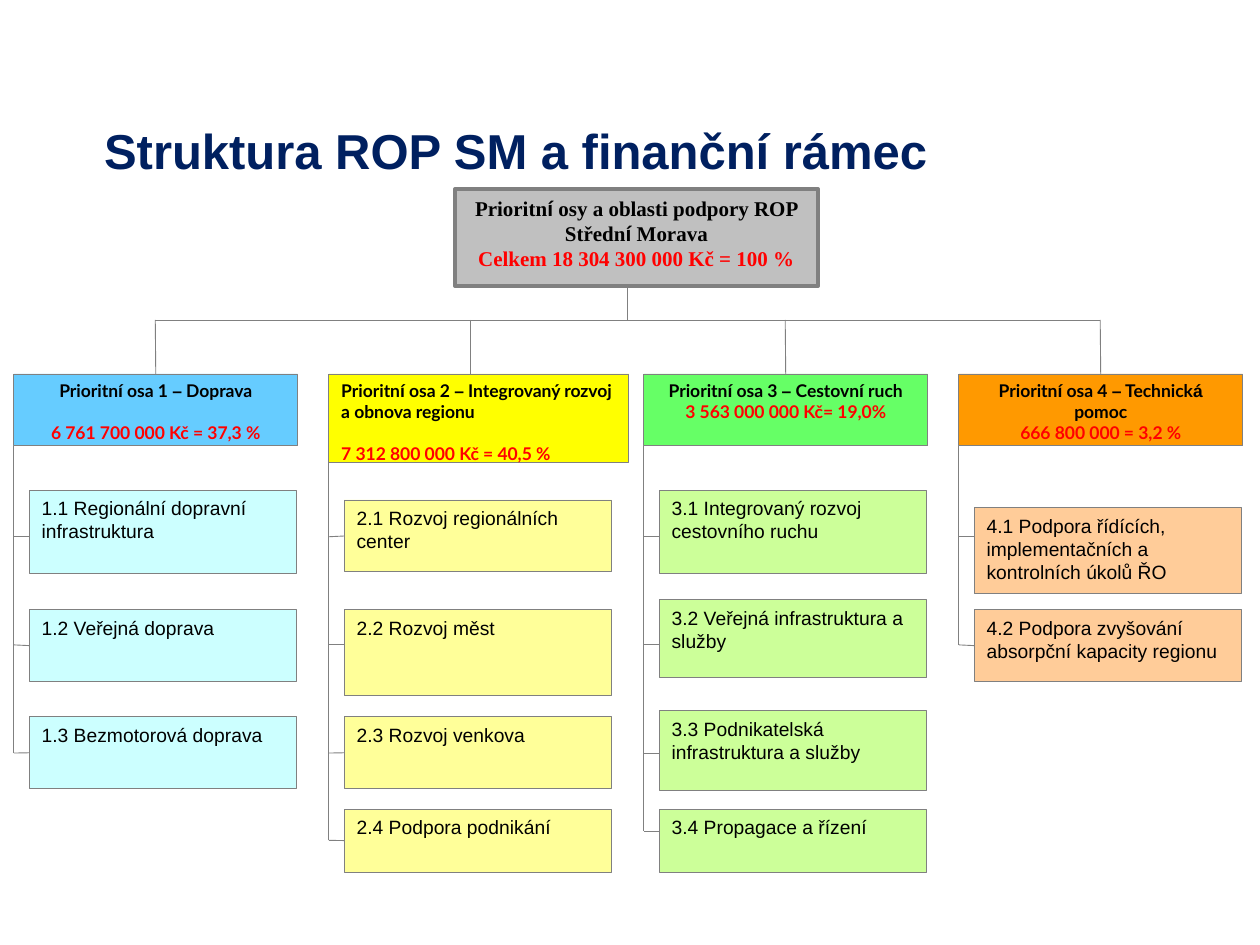
from itertools import groupby

from lxml.etree import SubElement
from pptx import Presentation
from pptx.dml.color import RGBColor as Rgb
from pptx.enum.shapes import MSO_CONNECTOR as Link, MSO_SHAPE as Shape
from pptx.enum.text import MSO_ANCHOR as Anchor, PP_ALIGN as Align
from pptx.oxml.ns import qn
from pptx.util import Cm, Pt

THEME = {
    "title": "002060", "text": "000000", "amount": "FF0000",
    "line": "808080", "root": "C0C0C0",
    "title_size": 28, "root_size": 12, "axis_size": 10, "area_size": 11,
    "hairline": 0.5, "frame": 2,
    "sans": "Arial", "axis_font": "Lato", "root_font": "Times New Roman",
}
ARIAL_LETTERS = "íá–"

TITLE = "Struktura ROP SM a finanční rámec"
ROOT = ("Prioritní osy a oblasti podpory ROP Střední Morava",
        "Celkem 18 304 300 000 Kč = 100 %")
AXES = [
    {"name": "Prioritní osa 1 – Doprava", "amount": "6 761 700 000 Kč = 37,3 %",
     "size": (5.72, 1.45), "align": Align.CENTER, "gap": 12,
     "fill": "66CCFF", "area_fill": "CCFFFF",
     "areas": [("1.1 Regionální dopravní infrastruktura", 9.88, 1.68, 10.82),
               ("1.2 Veřejná doprava", 12.29, 1.45, 13),
               ("1.3 Bezmotorová doprava", 14.45, 1.45, 15.18)]},
    {"name": "Prioritní osa 2 – Integrovaný rozvoj a obnova regionu",
     "amount": "7 312 800 000 Kč = 40,5 %",
     "size": (6.05, 1.78), "align": Align.LEFT, "gap": 12,
     "fill": "FFFF00", "area_fill": "FFFF99",
     "areas": [("2.1 Rozvoj regionálních center", 10.08, 1.45, 10.82),
               ("2.2 Rozvoj měst", 12.29, 1.73, 13),
               ("2.3 Rozvoj venkova", 14.45, 1.45, 15.18),
               ("2.4 Podpora podnikání", 16.31, 1.27, 16.94)]},
    {"name": "Prioritní osa 3 – Cestovní ruch", "amount": "3 563 000 000 Kč= 19,0%",
     "size": (5.72, 1.45), "align": Align.CENTER, "gap": 0,
     "fill": "66FF66", "area_fill": "CCFF99",
     "areas": [("3.1 Integrovaný rozvoj cestovního ruchu", 9.88, 1.68, 10.82),
               ("3.2 Veřejná infrastruktura a služby", 12.09, 1.57, 13),
               ("3.3 Podnikatelská infrastruktura a služby", 14.33, 1.6, 15.18),
               ("3.4 Propagace a řízení", 16.31, 1.27, 16.76)]},
    {"name": "Prioritní osa 4 – Technická pomoc", "amount": "666 800 000 = 3,2 %",
     "size": (5.72, 1.45), "align": Align.CENTER, "gap": 0,
     "fill": "FF9900", "area_fill": "FFCC99",
     "areas": [("4.1 Podpora řídících, implementačních a kontrolních úkolů ŘO",
                10.24, 1.73, 10.82),
               ("4.2 Podpora zvyšování absorpční kapacity regionu",
                12.29, 1.45, 13)]},
]

LEFT, PITCH, INDENT, AREA_WIDTH = 0.28, 6.35, 0.31, 5.39
AXIS_TOP, SPINE_TOP = 7.54, 8.99
BUS_TOP, DROP_LEFT, TRUNK_LEFT, TRUNK_TOP = 6.45, 3.13, 12.65, 5.72
TOLERANCE = Cm(0.03)


def write(para, text, *, size, font, color=THEME["text"], bold=False,
          align=Align.LEFT, before=0):
    """Fill a paragraph, setting the Arial letters in their own spans."""
    para.alignment = align
    if before:
        para.space_before = Pt(before)
    for is_arial, letters in groupby(text, lambda letter: letter in ARIAL_LETTERS):
        span = para.add_run()
        span.text = "".join(letters)
        span.font.name = THEME["sans"] if is_arial else font
        span.font.size = Pt(size)
        span.font.bold = bold
        span.font.color.rgb = Rgb.from_string(color)


def add_box(page, left, top, width, height, fill, weight=THEME["hairline"]):
    """Add a framed rectangle with text starting at its top."""
    box = page.shapes.add_shape(Shape.RECTANGLE, Cm(left), Cm(top), Cm(width), Cm(height))
    box.shadow.inherit = False
    box.fill.solid()
    box.fill.fore_color.rgb = Rgb.from_string(fill)
    box.line.color.rgb = Rgb.from_string(THEME["line"])
    box.line.width = Pt(weight)
    box.text_frame.word_wrap = True
    box.text_frame.vertical_anchor = Anchor.TOP
    return box


def write_heading(box, name, amount, *, gap=0, **style):
    """Write a bold name with its amount below."""
    frame = box.text_frame
    write(frame.paragraphs[0], name, bold=True, **style)
    write(frame.add_paragraph(), amount, bold=True, color=THEME["amount"],
          before=gap, **style)


def add_line(page, start, end, box=None, side=0):
    """Draw a line, joined to the box where it meets the middle of that side."""
    line = page.shapes.add_connector(Link.STRAIGHT, *map(Cm, start + end))
    line.line.color.rgb = Rgb.from_string(THEME["line"])
    line.line.width = Pt(THEME["hairline"])
    SubElement(line._element.spPr, qn("a:effectLst"))
    if box is not None:
        middle = {0: box.left + box.width // 2, 1: box.top + box.height // 2}[side]
        if abs(middle - Cm(end[side])) <= TOLERANCE:
            line.end_connect(box, side)


def add_axis(page, index, axis):
    """Build one column: the axis, its areas and the lines between them."""
    left = LEFT + index * PITCH
    drop = DROP_LEFT + index * PITCH
    head = add_box(page, left, AXIS_TOP, *axis["size"], axis["fill"])
    write_heading(head, axis["name"], axis["amount"], gap=axis["gap"],
                  align=axis["align"], size=THEME["axis_size"], font=THEME["axis_font"])
    add_line(page, (drop, BUS_TOP), (drop, AXIS_TOP), head, 0)
    add_line(page, (left, SPINE_TOP), (left, axis["areas"][-1][-1]))
    for text, top, height, branch in axis["areas"]:
        box = add_box(page, left + INDENT, top, AREA_WIDTH, height, axis["area_fill"])
        write(box.text_frame.paragraphs[0], text,
              size=THEME["area_size"], font=THEME["sans"])
        add_line(page, (left, branch), (left + INDENT, branch), box, 1)


def main():
    """Build and save the slide."""
    deck = Presentation()
    deck.slide_width, deck.slide_height = Cm(25.4), Cm(19.05)
    page = deck.slides.add_slide(deck.slide_layouts[6])

    title = page.shapes.add_textbox(Cm(1.85), Cm(2.18), Cm(22.23), Cm(6.25))
    title.text_frame.word_wrap = True
    title.text_frame.margin_top = Cm(0.25)
    write(title.text_frame.paragraphs[0], TITLE, size=THEME["title_size"],
          font=THEME["sans"], color=THEME["title"], bold=True)

    last_drop = DROP_LEFT + (len(AXES) - 1) * PITCH
    add_line(page, (DROP_LEFT, BUS_TOP), (last_drop, BUS_TOP))
    add_line(page, (TRUNK_LEFT, TRUNK_TOP), (TRUNK_LEFT, BUS_TOP))
    for index, axis in enumerate(AXES):
        add_axis(page, index, axis)

    root = add_box(page, 9.17, 3.81, 7.32, 1.96, THEME["root"], THEME["frame"])
    write_heading(root, *ROOT, align=Align.CENTER,
                  size=THEME["root_size"], font=THEME["root_font"])
    deck.save("out.pptx")


if __name__ == "__main__":
    main()
